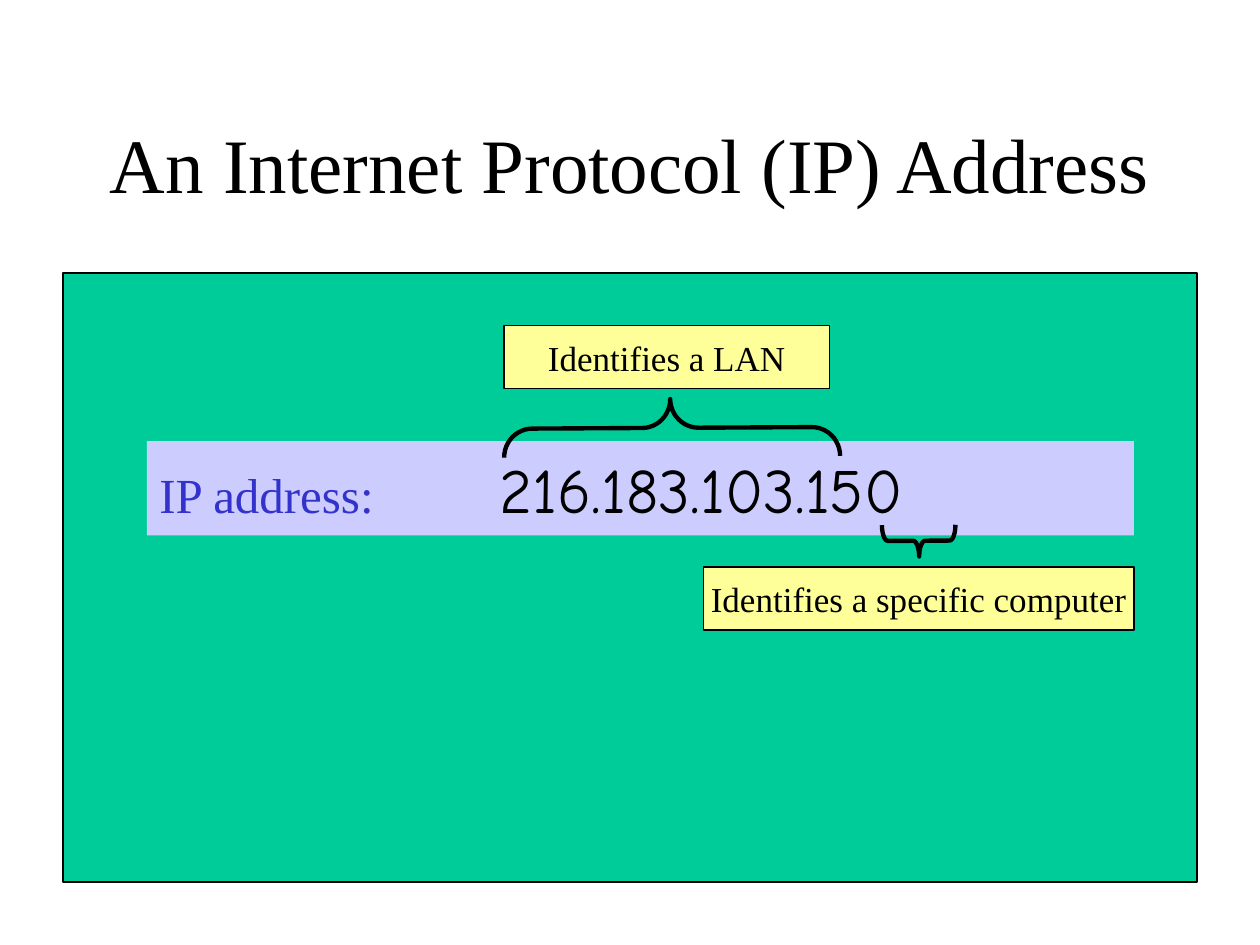
from lxml import etree
from pptx import Presentation
from pptx import util as u
from pptx.dml.color import RGBColor
from pptx.enum import shapes, text
from pptx.oxml.ns import qn

CELL = u.Inches(1) // 12  # twelve grid cells to the inch
SERIF, HAND = "Times New Roman", "Comic Neue"
BLACK, GREEN, LILAC, YELLOW, BLUE = "000000", "00CC99", "CCCCFF", "FFFF99", "3333CC"


def color(value):
    return RGBColor.from_string(value)


def inside(box, x, y, w, h):
    """Move a box given relative to another one into slide cells."""
    return box[0] + x, box[1] + y, w, h


def emu(box):
    return [round(v * CELL) for v in box]


def add_run(p, words, size=20, font=SERIF, ink=BLACK):
    r = p.add_run()
    r.text = words
    r.font.size, r.font.name = u.Pt(size), font
    r.font.color.rgb = color(ink)


def set_frame(sp, align, wrap):
    tf = sp.text_frame
    tf.word_wrap = wrap
    tf.vertical_anchor = text.MSO_ANCHOR.MIDDLE
    p = tf.paragraphs[0]
    p.alignment = align
    return p


def add_shape(s, kind, box, fill=None, line=None):
    sp = s.shapes.add_shape(kind, *emu(box))
    sp.shadow.inherit = False
    if fill:
        sp.fill.solid()
        sp.fill.fore_color.rgb = color(fill)
    else:
        sp.fill.background()
    if line:
        sp.line.color.rgb = color(BLACK)
        sp.line.width = u.Pt(line)
    else:
        sp.line.fill.background()
    return sp


def add_title(s, box):
    sp = s.shapes.add_textbox(*emu(box))
    p = set_frame(sp, text.PP_ALIGN.CENTER, True)
    add_run(p, "An Internet Protocol (IP) Address", size=44)


def add_label(s, box, words):
    sp = add_shape(s, shapes.MSO_SHAPE.RECTANGLE, box, YELLOW, 0.75)
    add_run(set_frame(sp, text.PP_ALIGN.CENTER, False), words)


def add_brace(s, box, angle, curl):
    """Turn an upright brace so that it fills the given wide box."""
    x, y, w, h = box
    upright = x + (w - h) / 2, y + (h - w) / 2, h, w
    sp = add_shape(s, shapes.MSO_SHAPE.LEFT_BRACE, upright, line=2.5)
    sp.rotation = angle
    sp.adjustments[0], sp.adjustments[1] = curl, 0.505


def add_address_band(s, box):
    sp = add_shape(s, shapes.MSO_SHAPE.RECTANGLE, box, LILAC)
    p = set_frame(sp, text.PP_ALIGN.LEFT, True)
    tabs = etree.SubElement(p._p.get_or_add_pPr(), qn("a:tabLst"))
    etree.SubElement(tabs, qn("a:tab"), pos=str(u.Inches(2.7)), algn="l")
    add_run(p, "IP address:", size=28, ink=BLUE)
    add_run(p, "\t", size=36)
    add_run(p, "216.183.103.150", size=36, font=HAND)


def add_diagram(s, box):
    add_shape(s, shapes.MSO_SHAPE.RECTANGLE, box, GREEN, 0.75)
    add_address_band(s, inside(box, 8, 16, 94, 9))
    add_label(s, inside(box, 42, 5, 31, 6), "Identifies a LAN")
    add_brace(s, inside(box, 78, 24, 7, 3), 269.7, 0.19)
    add_brace(s, inside(box, 42, 12, 32, 5.5), 89.7, 0.49)
    add_label(s, inside(box, 61, 28, 41, 6), "Identifies a specific computer")


def main():
    prs = Presentation()
    prs.slide_width, prs.slide_height = u.Inches(10), u.Inches(7.5)
    s = prs.slides.add_slide(prs.slide_layouts[6])
    add_title(s, (9, 8, 102, 15))
    add_diagram(s, (6, 26, 108, 58))
    prs.save("out.pptx")


if __name__ == "__main__":
    main()
